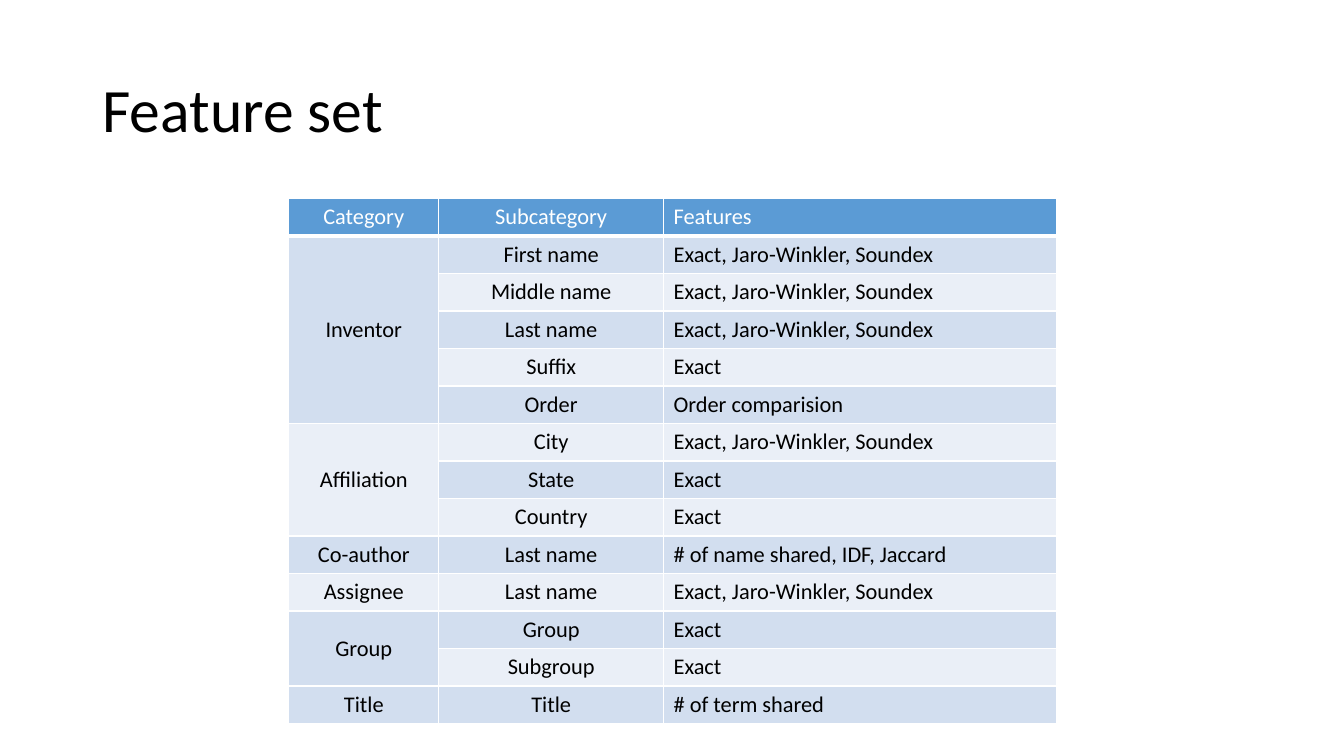
from lxml.etree import SubElement
from pptx import Presentation
from pptx.dml.color import RGBColor
from pptx.enum.text import MSO_ANCHOR, PP_ALIGN
from pptx.oxml.ns import qn
from pptx.util import Pt

PX = 9525  # EMU per px, 96 px to the inch
COLORS = {
    "text": "000000",
    "white": "FFFFFF",
    "header": "5B9BD5",
    "band_dark": "D2DEEF",
    "band_light": "EAEFF7",
}
HEADINGS = ("Category", "Subcategory", "Features")
NAME_FEATURES = "Exact, Jaro-Winkler, Soundex"
FEATURES = {
    "Inventor": [
        ("First name", NAME_FEATURES),
        ("Middle name", NAME_FEATURES),
        ("Last name", NAME_FEATURES),
        ("Suffix", "Exact"),
        ("Order", "Order comparision"),
    ],
    "Affiliation": [
        ("City", NAME_FEATURES),
        ("State", "Exact"),
        ("Country", "Exact"),
    ],
    "Co-author": [("Last name", "# of name shared, IDF, Jaccard")],
    "Assignee": [("Last name", NAME_FEATURES)],
    "Group": [("Group", "Exact"), ("Subgroup", "Exact")],
    "Title": [("Title", "# of term shared")],
}


def set_text(tf, text, size=16, color="text", align=PP_ALIGN.LEFT, spacing=None):
    p = tf.paragraphs[0]
    p.alignment = align
    if spacing:
        p.line_spacing = spacing
    r = p.add_run()
    r.text = text
    r.font.name = "Calibri"
    r.font.size = Pt(size)
    r.font.bold = False
    r.font.color.rgb = RGBColor.from_string(COLORS[color])


class Deck:
    def __init__(self, width, height):
        self.prs = Presentation()
        self.prs.slide_width, self.prs.slide_height = width * PX, height * PX
        self.s = self.prs.slides.add_slide(self.prs.slide_layouts[5])

    def title(self, text, x, y, w, h):
        sp = self.s.shapes.title
        sp.left, sp.top, sp.width, sp.height = (v * PX for v in (x, y, w, h))
        sp.text_frame.vertical_anchor = MSO_ANCHOR.MIDDLE
        set_text(sp.text_frame, text, size=44, spacing=0.9)

    def table(self, x, y, widths, row_height, rows):
        frame = self.s.shapes.add_table(
            rows, len(widths), x * PX, y * PX,
            sum(widths) * PX, rows * row_height * PX)
        table = frame.table
        table.first_row = table.horz_banding = False
        for column, width in zip(table.columns, widths):
            column.width = width * PX
        return table

    def cell(self, cell, fill, bottom=1):
        tcPr = cell._tc.get_or_add_tcPr()
        for side, weight in zip("LRTB", (1, 1, 1, bottom)):
            ln = SubElement(tcPr, qn(f"a:ln{side}"), w=str(Pt(weight)))
            solid = SubElement(ln, qn("a:solidFill"))
            SubElement(solid, qn("a:srgbClr"), val=COLORS["white"])
        cell.fill.solid()
        cell.fill.fore_color.rgb = RGBColor.from_string(COLORS[fill])


def main():
    deck = Deck(1280, 720)
    deck.title("Feature set", 88, 38, 1104, 139)

    # Table grid with banded rows
    rows = 1 + sum(len(group) for group in FEATURES.values())
    table = deck.table(275, 189, (143, 214, 374), 35, rows)
    for i, row in enumerate(table.rows):
        fill = ("band_dark" if i % 2 else "band_light") if i else "header"
        for cell in row.cells:
            deck.cell(cell, fill, bottom=1 if i else 3)

    # Header row
    aligns = (PP_ALIGN.CENTER, PP_ALIGN.CENTER, PP_ALIGN.LEFT)
    for j, (heading, align) in enumerate(zip(HEADINGS, aligns)):
        set_text(table.cell(0, j).text_frame, heading, color="white", align=align)

    # Categories, merged over their subcategories
    top = 1
    for category, group in FEATURES.items():
        cell = table.cell(top, 0)
        if len(group) > 1:
            cell.merge(table.cell(top + len(group) - 1, 0))
        cell.vertical_anchor = MSO_ANCHOR.MIDDLE
        set_text(cell.text_frame, category, align=aligns[0])
        for i, (subcategory, features) in enumerate(group, top):
            set_text(table.cell(i, 1).text_frame, subcategory, align=aligns[1])
            set_text(table.cell(i, 2).text_frame, features, align=aligns[2])
        top += len(group)

    deck.prs.save("out.pptx")


if __name__ == "__main__":
    main()
